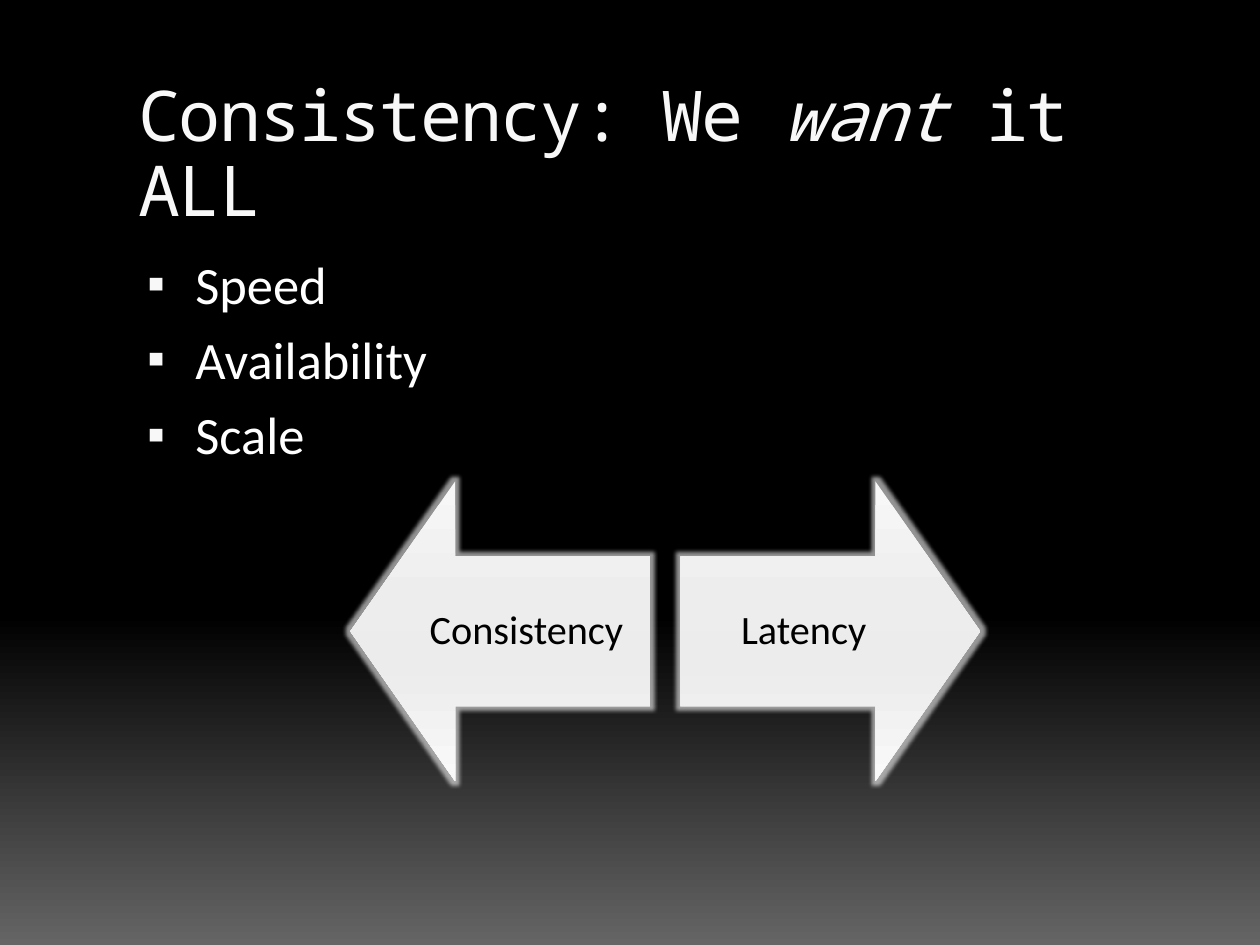
from lxml.etree import SubElement
from pptx import Presentation
from pptx.dml.color import RGBColor
from pptx.enum.shapes import MSO_SHAPE
from pptx.enum.text import MSO_ANCHOR, MSO_AUTO_SIZE, PP_ALIGN
from pptx.oxml.ns import qn
from pptx.util import Inches, Pt

BACKDROP = [(0, "000000"), (65, "000000"), (100, "656565")]
SILVER = [(0, "F7F7F7"), (40, "EDEDED"), (50, "ECECEC"), (65, "EDEDED"), (100, "F9F9F9")]
OFF_WHITE = "F8F8F8"
MARGIN, CONTENT_WIDTH = 1, 8.5
ARROW_SIZE, ARROW_TOP = 2.38, 3.82
LABEL_WIDTH, LABEL_HEIGHT = 1.96, ARROW_SIZE / 2


def add(parent, tag, **attributes):
    return SubElement(parent, qn(tag), {key: str(value) for key, value in attributes.items()})


def place(shape, left, top, width, height):
    shape.left, shape.top = Inches(left), Inches(top)
    shape.width, shape.height = Inches(width), Inches(height)


def style(run, font, size, color):
    run.font.name, run.font.size = font, Pt(size)
    run.font.color.rgb = RGBColor.from_string(color)


def vertical_gradient(fill, element, stops):
    """Fill from top to bottom, whatever the rotation of the shape."""
    fill.gradient()
    gradient = next(element.iter(qn("a:gradFill")))
    gradient.set("rotWithShape", "0")
    for child in list(gradient):
        gradient.remove(child)
    stop_list = add(gradient, "a:gsLst")
    for percent, color in stops:
        stop = add(stop_list, "a:gs", pos=percent * 1000)
        add(stop, "a:srgbClr", val=color)
    add(gradient, "a:lin", ang=90 * 60000, scaled=0)


def add_glow(shape, color, radius, opacity):
    shape.shadow.inherit = False
    effects = shape._element.spPr.find(qn("a:effectLst"))
    glow = add(effects, "a:glow", rad=Pt(radius))
    add(add(glow, "a:srgbClr", val=color), "a:alpha", val=opacity * 1000)


def fill_title(title, parts):
    place(title, MARGIN, 0.56, CONTENT_WIDTH, 1)
    frame = title.text_frame
    frame.auto_size, frame.vertical_anchor = MSO_AUTO_SIZE.NONE, MSO_ANCHOR.TOP
    frame.margin_top = Inches(0.08)
    paragraph = frame.paragraphs[0]
    paragraph.alignment, paragraph.line_spacing = PP_ALIGN.LEFT, 0.9
    for text, italic in parts:
        run = paragraph.add_run()
        run.text = text
        style(run, "Noto Sans Mono", 40, OFF_WHITE)
        run.font.italic = italic
        run.font._element.set("spc", "-100")


def fill_list(body, items):
    place(body, MARGIN, 1.95, CONTENT_WIDTH, 5)
    frame = body.text_frame
    frame.auto_size = MSO_AUTO_SIZE.NONE
    frame.text = "\n".join(items)
    for paragraph in frame.paragraphs:
        paragraph.space_before = Pt(7)
        style(paragraph.runs[0], "Calibri", 30, "FFFFFF")
        properties = paragraph._p.get_or_add_pPr()
        properties.set("marL", str(Inches(0.45)))
        properties.set("indent", str(Inches(-0.38)))
        add(add(properties, "a:buClr"), "a:srgbClr", val=OFF_WHITE)
        add(properties, "a:buSzPct", val=95000)
        add(properties, "a:buFont", typeface="Calibri")
        add(properties, "a:buChar", char="▪")


def add_arrow(slide, left, rotation):
    arrow = slide.shapes.add_shape(
        MSO_SHAPE.UP_ARROW, Inches(left), Inches(ARROW_TOP), Inches(ARROW_SIZE), Inches(ARROW_SIZE))
    arrow.rotation = rotation
    arrow.adjustments[0], arrow.adjustments[1] = 0.5, 0.35
    vertical_gradient(arrow.fill, arrow._element, SILVER)
    arrow.line.fill.background()
    add_glow(arrow, OFF_WHITE, 5, 60)


def add_label(slide, left, text):
    top = ARROW_TOP + (ARROW_SIZE - LABEL_HEIGHT) / 2
    label = slide.shapes.add_textbox(
        Inches(left), Inches(top), Inches(LABEL_WIDTH), Inches(LABEL_HEIGHT))
    frame = label.text_frame
    frame.word_wrap, frame.vertical_anchor = True, MSO_ANCHOR.MIDDLE
    frame.margin_left = frame.margin_right = Inches(0.18)
    frame.margin_top = frame.margin_bottom = Inches(0.18)
    frame.text = text
    paragraph = frame.paragraphs[0]
    paragraph.alignment, paragraph.line_spacing = PP_ALIGN.CENTER, 0.9
    style(paragraph.runs[0], "Calibri", 23, "000000")


def main():
    deck = Presentation()
    deck.slide_width, deck.slide_height = Inches(10), Inches(7.5)
    slide = deck.slides.add_slide(deck.slide_layouts[1])
    vertical_gradient(slide.background.fill, slide._element, BACKDROP)

    fill_title(slide.shapes.title, [("Consistency: We ", False), ("want", True), (" it ALL", False)])
    fill_list(slide.placeholders[1], ["Speed", "Availability", "Scale"])

    left_arrow, right_arrow = 2.78, 5.4
    add_arrow(slide, left_arrow, 270)
    add_label(slide, left_arrow + ARROW_SIZE - LABEL_WIDTH, "Consistency")
    add_arrow(slide, right_arrow, 90)
    add_label(slide, right_arrow, "Latency")
    deck.save("out.pptx")


if __name__ == "__main__":
    main()
